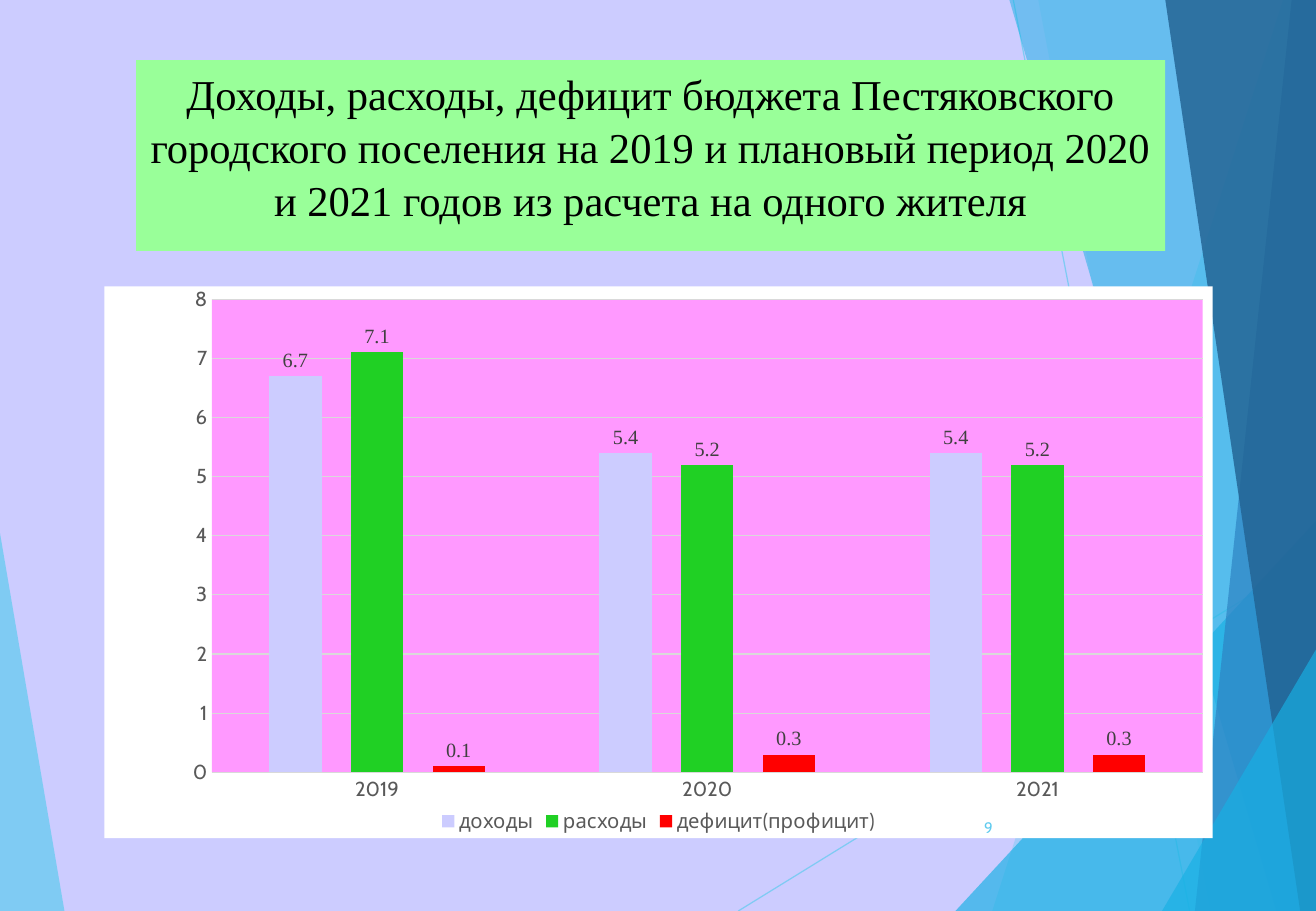
from typing import NamedTuple

from lxml.etree import SubElement
from pptx import Presentation
from pptx.chart.data import CategoryChartData
from pptx.dml.color import RGBColor
from pptx.enum.chart import XL_CHART_TYPE, XL_LABEL_POSITION, XL_LEGEND_POSITION, XL_TICK_MARK
from pptx.enum.shapes import MSO_CONNECTOR, MSO_SHAPE
from pptx.enum.text import MSO_ANCHOR, PP_ALIGN
from pptx.oxml import parse_xml
from pptx.oxml.ns import nsdecls, qn
from pptx.util import Inches, Pt

SLIDE_W, SLIDE_H = Inches(10.83), Inches(7.5)
HEADING_FONT, BODY_FONT = "Times New Roman", "Cabin"

LAVENDER = RGBColor(0xCC, 0xCC, 0xFF)
MINT = RGBColor(0x99, 0xFF, 0x99)
PINK = RGBColor(0xFF, 0x99, 0xFF)
GREEN = RGBColor(0x20, 0xD0, 0x24)
RED = RGBColor(0xFF, 0x00, 0x00)
WHITE = RGBColor(0xFF, 0xFF, 0xFF)
BLACK = RGBColor(0x00, 0x00, 0x00)
DARK_GREY = RGBColor(0x40, 0x40, 0x40)
GREY = RGBColor(0x59, 0x59, 0x59)
PALE_GREY = RGBColor(0xD9, 0xD9, 0xD9)
SKY = RGBColor(0x5F, 0xCB, 0xEF)
CYAN = RGBColor(0x17, 0xB0, 0xE4)
BLUE = RGBColor(0x2E, 0x83, 0xC3)
NAVY = RGBColor(0x22, 0x62, 0x92)


class Facet(NamedTuple):
    """Translucent polygon; corners are percentages of the slide."""
    corners: list[tuple[float, float]]
    color: RGBColor
    opacity: int


class Ray(NamedTuple):
    """Thin line; ends are percentages of the slide."""
    start: tuple[float, float]
    end: tuple[float, float]


class Area(NamedTuple):
    """Rectangle in percentages of the slide."""
    left: float
    top: float
    width: float
    height: float


class Indicator(NamedTuple):
    name: str
    values: tuple[float, ...]
    color: RGBColor


LEFT_FACET = Facet([(0, 58.5), (4.9, 100), (0, 100)], SKY, 70)
RAYS = [Ray((56.1, 100), (100, 60.9)), Ray((77, 0), (90.4, 100))]
RIGHT_FACETS = [
    Facet([(97.5, 0), (75.4, 100), (100, 100), (100, 0)], SKY, 36),
    Facet([(78.9, 0), (92, 100), (100, 100), (100, 0)], SKY, 20),
    Facet([(72.6, 100), (100, 57.2), (100, 100)], CYAN, 66),
    Facet([(76.7, 0), (97, 100), (100, 100), (100, 0)], CYAN, 50),
    Facet([(98.15, 0), (90.8, 100), (100, 100), (100, 0)], BLUE, 70),
    Facet([(88.55, 0), (98.8, 100), (100, 100), (100, 0)], NAVY, 82),
    Facet([(88.3, 100), (100, 71.3), (100, 100)], CYAN, 66),
]

TITLE = ("Доходы, расходы, дефицит бюджета Пестяковского городского поселения "
         "на 2019 и плановый период 2020 и 2021 годов из расчета на одного жителя")
TITLE_AREA = Area(10.34, 6.6, 78.2, 20.95)
CHART_AREA = Area(7.94, 31.45, 84.2, 60.55)
NUMBER_AREA = Area(70.55, 88.13, 5.63, 5.33)
PLOT_LAYOUT = {"x": 0.097, "y": 0.023, "w": 0.894, "h": 0.858}

YEARS = ("2019", "2020", "2021")
INDICATORS = [
    Indicator("доходы", (6.7, 5.4, 5.4), LAVENDER),
    Indicator("расходы", (7.1, 5.2, 5.2), GREEN),
    Indicator("дефицит(профицит)", (0.1, 0.3, 0.3), RED),
]


def across(percent: float) -> int:
    return round(SLIDE_W * percent / 100)


def down(percent: float) -> int:
    return round(SLIDE_H * percent / 100)


def place(area: Area) -> tuple[int, int, int, int]:
    return across(area.left), down(area.top), across(area.width), down(area.height)


def set_opacity(shape, percent: int) -> None:
    for color in shape.element.spPr.iter(qn("a:srgbClr")):
        SubElement(color, qn("a:alpha"), val=str(percent * 1000))


def draw_facet(slide, facet: Facet) -> None:
    first, *others = [(across(x), down(y)) for x, y in facet.corners]
    builder = slide.shapes.build_freeform(*first)
    builder.add_line_segments(others, close=True)
    shape = builder.convert_to_shape()
    shape.shadow.inherit = False
    shape.fill.solid()
    shape.fill.fore_color.rgb = facet.color
    shape.line.fill.background()
    set_opacity(shape, facet.opacity)


def draw_ray(slide, ray: Ray) -> None:
    (x1, y1), (x2, y2) = ray
    line = slide.shapes.add_connector(
        MSO_CONNECTOR.STRAIGHT, across(x1), down(y1), across(x2), down(y2))
    line.line.color.rgb = SKY
    line.line.width = Pt(0.75)
    set_opacity(line, 70)
    SubElement(line.element.spPr, qn("a:effectLst"))


def style_font(font, name: str, size: float, color: RGBColor) -> None:
    font.name, font.size = name, Pt(size)
    font.color.rgb = color


def write(shape, text: str, align: PP_ALIGN, anchor: MSO_ANCHOR,
          font: str, size: float, color: RGBColor) -> None:
    frame = shape.text_frame
    frame.word_wrap = True
    frame.vertical_anchor = anchor
    frame.margin_left = frame.margin_right = Inches(0.08)
    paragraph = frame.paragraphs[0]
    paragraph.alignment = align
    paragraph.line_spacing = 1.04
    run = paragraph.add_run()
    run.text = text
    style_font(run.font, font, size, color)


def draw_title(slide) -> None:
    banner = slide.shapes.add_shape(MSO_SHAPE.RECTANGLE, *place(TITLE_AREA))
    banner.shadow.inherit = False
    banner.fill.solid()
    banner.fill.fore_color.rgb = MINT
    banner.line.fill.background()
    write(banner, TITLE, PP_ALIGN.CENTER, MSO_ANCHOR.TOP, HEADING_FONT, 25.2, BLACK)


def solid_properties(color: RGBColor):
    return parse_xml(f'<c:spPr {nsdecls("c", "a")}><a:solidFill><a:srgbClr val="{color}"/>'
                     '</a:solidFill><a:ln><a:noFill/></a:ln></c:spPr>')


def set_backgrounds(chart) -> None:
    """Fix the inner plot area and fill it and the chart behind it."""
    plot_area = chart.element.chart.plotArea
    for old in plot_area.findall(qn("c:layout")):
        plot_area.remove(old)
    modes = "".join(f'<c:{side}Mode val="edge"/>' for side in "xy")
    sizes = "".join(f'<c:{key} val="{share}"/>' for key, share in PLOT_LAYOUT.items())
    plot_area.insert(0, parse_xml(
        f'<c:layout {nsdecls("c")}><c:manualLayout><c:layoutTarget val="inner"/>'
        f'{modes}{sizes}</c:manualLayout></c:layout>'))
    plot_area.append(solid_properties(PINK))
    chart.element.chart.addnext(solid_properties(WHITE))


def draw_chart(slide) -> None:
    data = CategoryChartData()
    data.categories = YEARS
    for indicator in INDICATORS:
        data.add_series(indicator.name, indicator.values)
    chart = slide.shapes.add_chart(
        XL_CHART_TYPE.COLUMN_CLUSTERED, *place(CHART_AREA), data).chart
    style_font(chart.font, BODY_FONT, 10, BLACK)
    chart.has_title = False
    chart.has_legend = True
    chart.legend.position = XL_LEGEND_POSITION.BOTTOM
    chart.legend.include_in_layout = False
    style_font(chart.legend.font, BODY_FONT, 12, GREY)

    for axis in (chart.category_axis, chart.value_axis):
        axis.major_tick_mark = axis.minor_tick_mark = XL_TICK_MARK.NONE
        style_font(axis.tick_labels.font, BODY_FONT, 12, GREY)
    values = chart.value_axis
    values.minimum_scale, values.maximum_scale, values.major_unit = 0, 8, 1
    values.format.line.fill.background()
    for ruling in (chart.category_axis, values.major_gridlines):
        ruling.format.line.color.rgb = PALE_GREY
        ruling.format.line.width = Pt(0.75)

    bars = chart.plots[0]
    bars.gap_width, bars.overlap, bars.vary_by_categories = 219, -56, False
    for series, indicator in zip(bars.series, INDICATORS):
        series.format.fill.solid()
        series.format.fill.fore_color.rgb = indicator.color
        labels = series.data_labels
        labels.show_value = True
        labels.position = XL_LABEL_POSITION.OUTSIDE_END
        style_font(labels.font, HEADING_FONT, 12, DARK_GREY)
    set_backgrounds(chart)


def main() -> None:
    deck = Presentation()
    deck.slide_width, deck.slide_height = SLIDE_W, SLIDE_H
    slide = deck.slides.add_slide(deck.slide_layouts[6])
    slide.background.fill.solid()
    slide.background.fill.fore_color.rgb = LAVENDER
    draw_facet(slide, LEFT_FACET)
    for ray in RAYS:
        draw_ray(slide, ray)
    for facet in RIGHT_FACETS:
        draw_facet(slide, facet)
    draw_title(slide)
    draw_chart(slide)
    write(slide.shapes.add_textbox(*place(NUMBER_AREA)), "9", PP_ALIGN.RIGHT,
          MSO_ANCHOR.MIDDLE, BODY_FONT, 9, SKY)
    deck.save("out.pptx")


if __name__ == "__main__":
    main()
